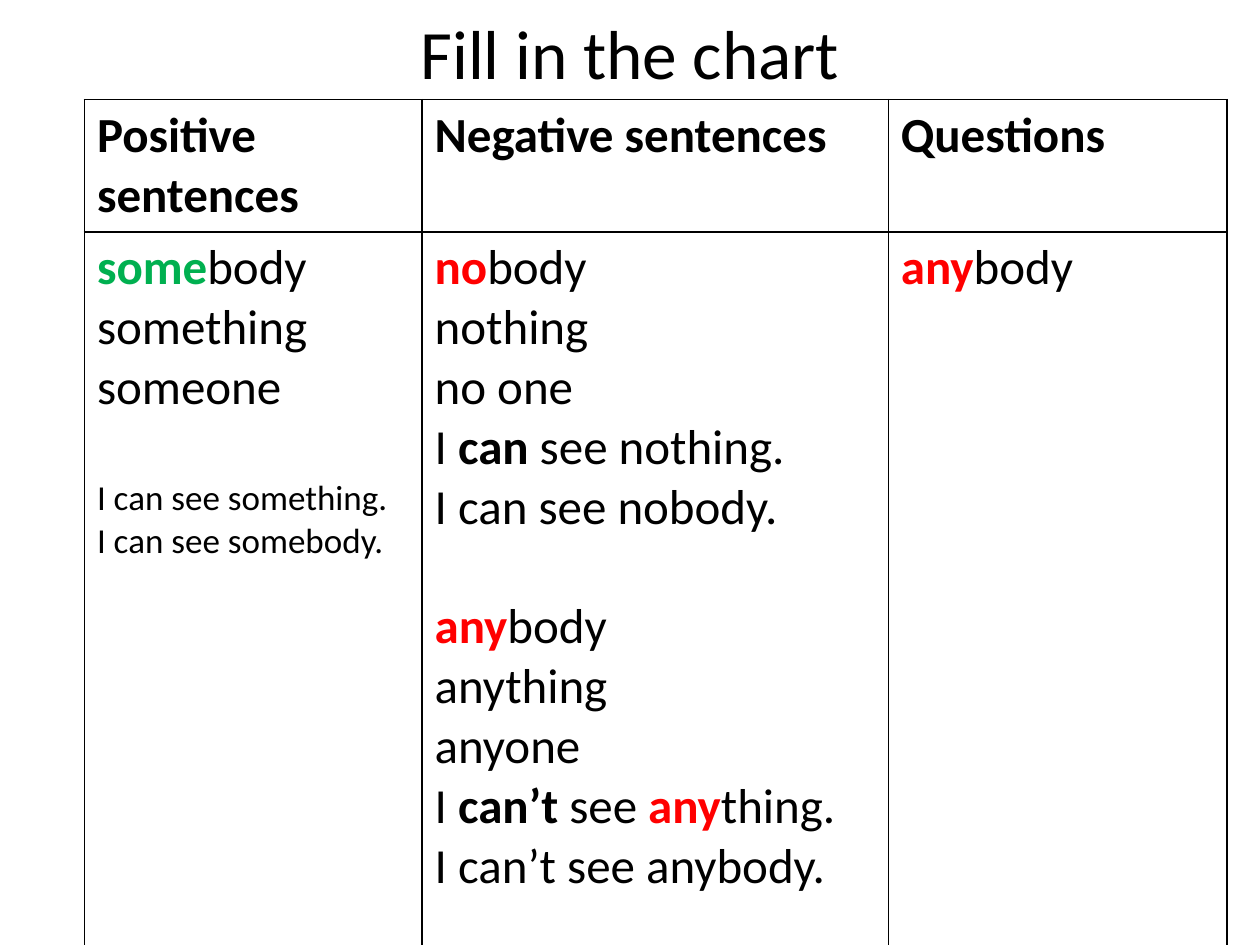
from lxml import etree
from pptx import Presentation
from pptx.dml.color import RGBColor
from pptx.enum.text import MSO_ANCHOR, MSO_AUTO_SIZE, PP_ALIGN
from pptx.oxml.ns import qn
from pptx.util import Inches, Pt

BLACK = RGBColor(0x00, 0x00, 0x00)
GREEN = RGBColor(0x00, 0xB0, 0x50)
RED = RGBColor(0xFF, 0x00, 0x00)
MIDDLE, CENTER = MSO_ANCHOR.MIDDLE, PP_ALIGN.CENTER
NO_FIT = MSO_AUTO_SIZE.NONE
FONT = "Calibri"
BIG, SMALL = 28, 20
GAP = 34  # one big line, in points

COLS = (2.68, 3.7, 2.69)
ROWS = (1.05, 5.68)
HEADS = ("Positive sentences", "Negative sentences", "Questions")

# Each line: (runs, size, space before); a run is (text, bold colour or None)
LISTS = (
    (
        ([("some", GREEN), ("body", None)], BIG, 0),
        ([("something", None)], BIG, 0),
        ([("someone", None)], BIG, 0),
        ([("I can see something.", None)], SMALL, GAP),
        ([("I can see somebody.", None)], SMALL, 0),
    ),
    (
        ([("no", RED), ("body", None)], BIG, 0),
        ([("nothing", None)], BIG, 0),
        ([("no one", None)], BIG, 0),
        ([("I ", None), ("can", BLACK), (" see nothing.", None)], BIG, 0),
        ([("I can see nobody.", None)], BIG, 0),
        ([("any", RED), ("body", None)], BIG, GAP),
        ([("anything", None)], BIG, 0),
        ([("anyone", None)], BIG, 0),
        ([("I ", None), ("can’t", BLACK), (" see ", None),
          ("any", RED), ("thing.", None)], BIG, 0),
        ([("I can’t see anybody.", None)], BIG, 0),
    ),
    (
        ([("any", RED), ("body", None)], BIG, 0),
    ),
)


def set_font(font, size):
    font.name, font.size = FONT, Pt(size)
    font.color.rgb = BLACK


def add_title(slide, box):
    title = slide.shapes.title
    title.left, title.top, title.width, title.height = map(Inches, box)
    frame = title.text_frame
    frame.text = "Fill in the chart"
    frame.auto_size, frame.vertical_anchor = NO_FIT, MIDDLE
    para = frame.paragraphs[0]
    para.alignment = CENTER
    set_font(para.font, 39.6)


def add_edges(cell):
    props = cell._tc.get_or_add_tcPr()
    for side in ("a:lnL", "a:lnR", "a:lnT", "a:lnB"):
        line = etree.SubElement(props, qn(side), w=str(Pt(1)))
        fill = etree.SubElement(line, qn("a:solidFill"))
        etree.SubElement(fill, qn("a:srgbClr"), val=str(BLACK))


def fill_cell(cell, lines):
    add_edges(cell)
    cell.fill.background()
    frame = cell.text_frame
    for i, (runs, size, space) in enumerate(lines):
        para = frame.add_paragraph() if i else frame.paragraphs[0]
        if space:
            para.space_before = Pt(space)
        set_font(para.font, size)
        for text, color in runs:
            run = para.add_run()
            run.text = text
            run.font.bold = color is not None
            run.font.color.rgb = color or BLACK


def add_grid(slide, left, top):
    box = map(Inches, (left, top, sum(COLS), sum(ROWS)))
    table = slide.shapes.add_table(len(ROWS), len(COLS), *box).table
    table.first_row = table.horz_banding = False
    for row, height in zip(table.rows, ROWS):
        row.height = Inches(height)
    for i, (width, head, lines) in enumerate(zip(COLS, HEADS, LISTS)):
        table.columns[i].width = Inches(width)
        fill_cell(table.cell(0, i), [([(head, BLACK)], BIG, 0)])
        fill_cell(table.cell(1, i), lines)


def main():
    deck = Presentation()
    deck.slide_width, deck.slide_height = Inches(10), Inches(7.5)
    slide = deck.slides.add_slide(deck.slide_layouts[5])  # title only
    add_title(slide, (0.5, 0.3, 9, 0.22))
    add_grid(slide, 0.67, 0.79)
    deck.save("out.pptx")


if __name__ == "__main__":
    main()
